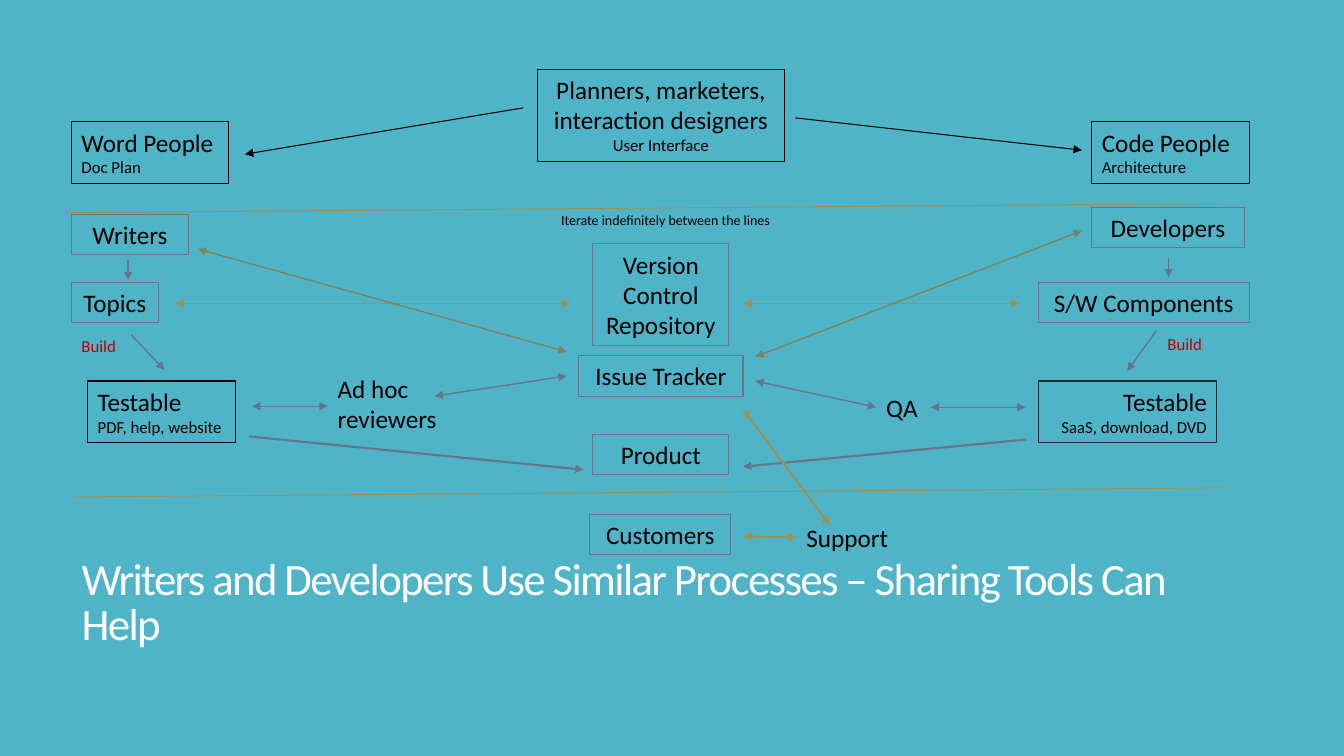
from lxml.etree import SubElement
from pptx import Presentation
from pptx.dml.color import RGBColor
from pptx.enum.shapes import MSO_CONNECTOR, MSO_SHAPE
from pptx.enum.text import MSO_ANCHOR, MSO_AUTO_SIZE, PP_ALIGN
from pptx.oxml.ns import qn
from pptx.util import Inches, Pt

TEAL = RGBColor(0x50, 0xB4, 0xC8)
WHITE = RGBColor(0xFF, 0xFF, 0xFF)
BLACK = RGBColor(0x00, 0x00, 0x00)
INK = RGBColor(0x16, 0x2F, 0x33)
SLATE = RGBColor(0x65, 0x76, 0x89)
OCHRE = RGBColor(0x9B, 0x92, 0x56)
OLIVE = RGBColor(0x7A, 0x85, 0x5D)
RED = RGBColor(0xC0, 0x00, 0x00)
FONT = "Calibri"
LEFT, CENTER, RIGHT = PP_ALIGN.LEFT, PP_ALIGN.CENTER, PP_ALIGN.RIGHT

# text, left, top, width, height
STEPS = [
    ("Version Control Repository", 5.88, 2.42, 1.35, 1.01),
    ("Issue Tracker", 5.74, 3.53, 1.63, 0.4),
    ("Product", 5.88, 4.31, 1.35, 0.4),
    ("Customers", 5.85, 5.1, 1.4, 0.4),
    ("Writers", 0.71, 2.13, 1.16, 0.4),
    ("Topics", 0.71, 2.8, 0.86, 0.4),
    ("Developers", 10.83, 2.06, 1.51, 0.4),
    ("S/W Components", 10.3, 2.8, 2.09, 0.4),
]

# heading, detail, left, top, width, height, alignment, outline
GROUPS = [
    ("Word People", "Doc Plan", 0.71, 1.21, 1.56, 0.61, LEFT, BLACK),
    ("Code People", "Architecture", 10.83, 1.21, 1.56, 0.61, LEFT, BLACK),
    ("Planners, marketers, interaction designers", "User Interface",
     5.33, 0.69, 2.45, 0.91, CENTER, BLACK),
    ("Testable", "PDF, help, website", 0.87, 3.78, 1.47, 0.61, LEFT, BLACK),
    ("Testable", "SaaS, download, DVD", 10.3, 3.78, 1.77, 0.61, RIGHT, INK),
]

# start, end, colour, width in points
ONE_WAY = [
    ((5.19, 1.07), (2.43, 1.53), BLACK, 0.75),
    ((7.89, 1.17), (10.73, 1.49), BLACK, 0.75),
    ((1.27, 2.58), (1.27, 2.78), SLATE, 1),
    ((11.59, 2.56), (11.59, 2.75), SLATE, 1),
    ((1.3, 3.32), (1.63, 3.67), SLATE, 1),
    ((11.47, 3.28), (11.18, 3.68), SLATE, 1),
    ((2.47, 4.33), (5.79, 4.66), SLATE, 1.5),
    ((10.18, 4.36), (7.37, 4.63), SLATE, 1.5),
]
TWO_WAY = [
    ((1.74, 3.01), (5.66, 3.01), OCHRE, 1),
    ((7.37, 3.01), (10.11, 3.01), OCHRE, 1),
    ((2.5, 4.03), (3.25, 4.03), SLATE, 1),
    ((4.31, 3.93), (5.62, 3.73), SLATE, 1),
    ((7.37, 4.06), (8.23, 5.21), OCHRE, 1.5),
    ((5.62, 3.49), (1.96, 2.47), OLIVE, 1),
    ((10.73, 2.29), (7.49, 3.54), OLIVE, 1),
]
ITERATION_BOUNDS = [
    ((0.66, 2.11), (12.07, 2.02), OCHRE, 0.75),
    ((0.74, 4.93), (12.15, 4.84), OCHRE, 0.75),
]


def style_font(font, size, color):
    font.name = FONT
    font.size = Pt(size)
    font.color.rgb = color


def write_text(shape, text, size=18, color=BLACK, align=LEFT, detail=None):
    """Fill a shape with text and, on a second line, an optional smaller detail."""
    frame = shape.text_frame
    frame.word_wrap = True
    frame.vertical_anchor = MSO_ANCHOR.TOP
    frame.auto_size = MSO_AUTO_SIZE.SHAPE_TO_FIT_TEXT
    paragraph = frame.paragraphs[0]
    paragraph.alignment = align
    style_font(paragraph.font, size, color)
    heading = paragraph.add_run()
    heading.text = text
    if detail:
        style_font(heading.font, size, color)
        paragraph.add_line_break()
        small = paragraph.add_run()
        small.text = detail
        style_font(small.font, 12, color)


def add_box(slide, text, left, top, width, height,
            align=CENTER, outline=SLATE, detail=None):
    box = slide.shapes.add_shape(MSO_SHAPE.RECTANGLE, Inches(left), Inches(top),
                                 Inches(width), Inches(height))
    box.shadow.inherit = False
    box.fill.background()
    box.line.color.rgb = outline
    box.line.width = Pt(0.75)
    write_text(box, text, align=align, detail=detail)


def add_label(slide, text, left, top, width, height, **text_style):
    label = slide.shapes.add_textbox(Inches(left), Inches(top),
                                     Inches(width), Inches(height))
    write_text(label, text, **text_style)
    return label


def add_line(slide, start, end, color, width, arrowheads=()):
    """Draw a straight line; arrowheads names its ends, headEnd before tailEnd."""
    line = slide.shapes.add_connector(MSO_CONNECTOR.STRAIGHT,
                                      *map(Inches, start + end))
    line.line.color.rgb = color
    line.line.width = Pt(width)
    properties = line._element.spPr
    outline = properties.find(qn("a:ln"))
    for arrowhead in arrowheads:
        SubElement(outline, qn(f"a:{arrowhead}"), type="triangle")
    SubElement(properties, qn("a:effectLst"))
    return line


def add_title(slide, text):
    title = slide.shapes.title
    title.left, title.top = Inches(0.71), Inches(5.83)
    title.width, title.height = Inches(11.79), Inches(0.67)
    frame = title.text_frame
    frame.text = text
    frame.word_wrap = True
    frame.auto_size = MSO_AUTO_SIZE.NONE
    frame.vertical_anchor = MSO_ANCHOR.BOTTOM
    paragraph = frame.paragraphs[0]
    paragraph.alignment = LEFT
    paragraph.line_spacing = 0.85
    style_font(paragraph.font, 32, WHITE)
    paragraph.runs[0].font._element.set("spc", "-120")


def main():
    presentation = Presentation()
    presentation.slide_width = Inches(13.33)
    presentation.slide_height = Inches(7.5)
    slide = presentation.slides.add_slide(presentation.slide_layouts[5])
    slide.background.fill.solid()
    slide.background.fill.fore_color.rgb = TEAL

    add_title(slide, "Writers and Developers Use Similar Processes – "
                     "Sharing Tools Can Help")
    for heading, detail, left, top, width, height, align, outline in GROUPS:
        add_box(slide, heading, left, top, width, height, align, outline, detail)
    for step in STEPS:
        add_box(slide, *step)

    support = add_label(slide, "Support", 7.9, 5.13, 1.12, 0.4)
    qa = add_label(slide, "QA", 8.69, 3.84, 0.54, 0.4)
    add_label(slide, "Ad hoc reviewers", 3.25, 3.65, 1.26, 0.71)
    add_label(slide, "Build", 0.71, 3.28, 0.56, 0.3, size=12, color=RED)
    add_label(slide, "Build", 11.48, 3.26, 0.79, 0.3, size=12, color=RED)
    add_label(slide, "Iterate indefinitely between the lines",
              4.85, 2.05, 3.5, 0.27, size=10, align=CENTER)

    both_ends = ("headEnd", "tailEnd")
    for bound in ITERATION_BOUNDS:
        add_line(slide, *bound)
    for arrow in ONE_WAY:
        add_line(slide, *arrow, arrowheads=("tailEnd",))
    for arrow in TWO_WAY:
        add_line(slide, *arrow, arrowheads=both_ends)

    tracker_to_qa = add_line(slide, (7.49, 3.78), (8.69, 4.04), SLATE, 1, both_ends)
    tracker_to_qa.end_connect(qa, 1)
    qa_to_testable = add_line(slide, (9.23, 4.04), (10.17, 4.04), SLATE, 1, both_ends)
    qa_to_testable.begin_connect(qa, 3)
    customers_to_support = add_line(slide, (7.37, 5.32), (7.9, 5.33),
                                    OCHRE, 1.5, both_ends)
    customers_to_support.end_connect(support, 1)

    presentation.save("out.pptx")


if __name__ == "__main__":
    main()
